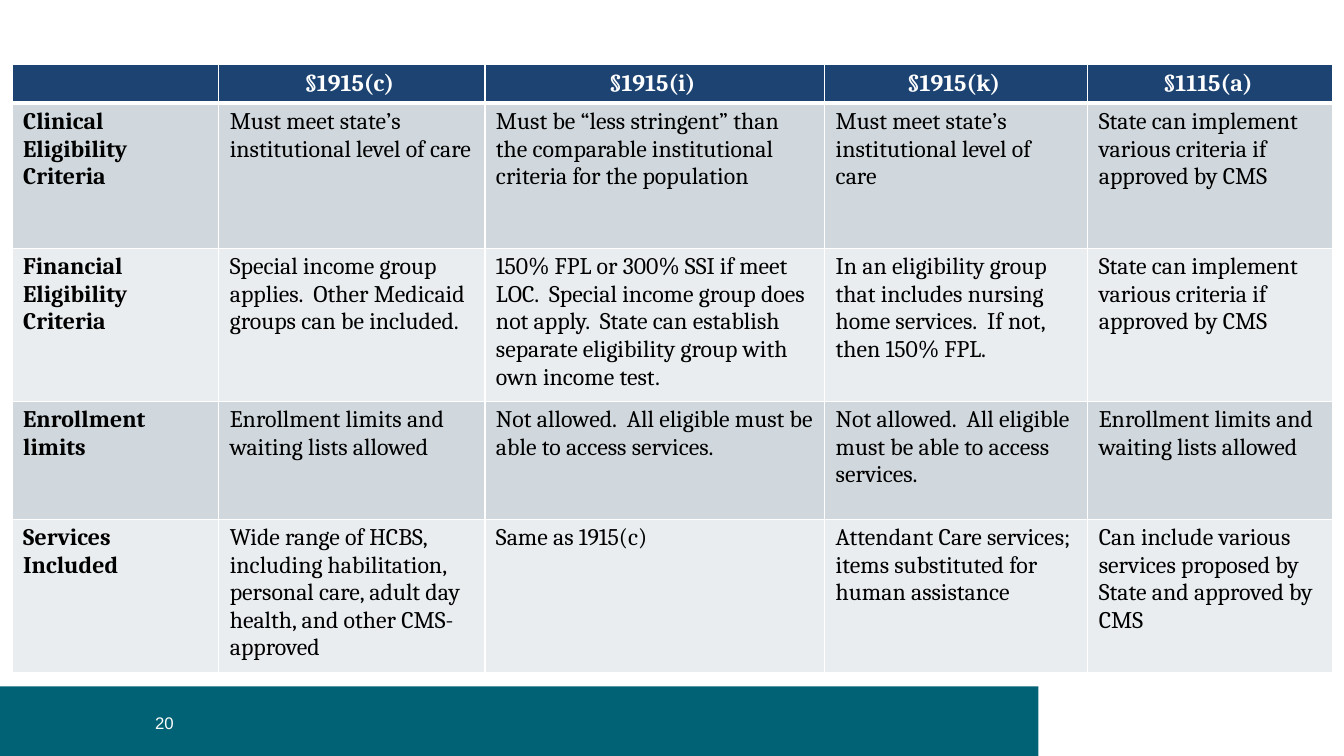
from dataclasses import dataclass

from lxml import etree
from pptx import Presentation
from pptx.dml.color import RGBColor
from pptx.enum import shapes, text
from pptx.oxml import ns
from pptx.util import Inches, Pt

WHITE, BLACK = "FFFFFF", "000000"
NAVY, TEAL = "1C4372", "006274"
BANDS = ("D0D8DD", "E9EDEF")
COLUMN_WIDTHS = (2.05, 2.64, 3.37, 2.61, 2.43)


@dataclass
class Row:
    height: float
    cells: tuple[str, ...]


ROWS = (
    Row(0.38, ("", "§1915(c) ", "§1915(i) ", "§1915(k) ", "§1115(a) ")),
    Row(1.44, (
        "Clinical\nEligibility Criteria",
        "Must meet state’s institutional level of care",
        "Must be “less stringent” than the comparable institutional criteria for the population",
        "Must meet state’s institutional level of care",
        "State can implement various criteria if approved by CMS",
    )),
    Row(0.9, (
        "Financial Eligibility Criteria",
        "Special income group applies.  Other Medicaid groups can be included.",
        "150% FPL or 300% SSI if meet LOC.  Special income group does not apply.  "
        "State can establish separate eligibility group with own income test.",
        "In an eligibility group that includes nursing home services.  If not, then 150% FPL.",
        "State can implement various criteria if approved by CMS",
    )),
    Row(1.17, (
        "Enrollment limits",
        "Enrollment limits and waiting lists allowed",
        "Not allowed.  All eligible must be able to access services.",
        "Not allowed.  All eligible must be able to access services.",
        "Enrollment limits and waiting lists allowed",
    )),
    Row(1.17, (
        "Services Included",
        "Wide range of HCBS, including habilitation, personal care, adult day health, "
        "and other CMS-approved",
        "Same as 1915(c)",
        "Attendant Care services; items substituted for human assistance",
        "Can include various services proposed by State and approved by CMS",
    )),
)


def set_color(target, color: str) -> None:
    """Colour a fill or a font."""
    if hasattr(target, "solid"):
        target.solid()
        target = target.fore_color
    else:
        target = target.color
    target.rgb = RGBColor.from_string(color)


def set_font(p, name: str, size: float, color: str, bold: bool = False) -> None:
    p.font.name, p.font.size, p.font.bold = name, Pt(size), bold
    set_color(p.font, color)


def add_borders(cell, bottom: float) -> None:
    """White cell edges, with the bottom one of the given width in points."""
    tc_pr = cell._tc.get_or_add_tcPr()
    widths = {"lnL": 1, "lnR": 1, "lnT": 1, "lnB": bottom}
    for i, (edge, width) in enumerate(widths.items()):
        line = etree.Element(ns.qn(f"a:{edge}"), w=str(Pt(width)))
        fill = etree.SubElement(line, ns.qn("a:solidFill"))
        etree.SubElement(fill, ns.qn("a:srgbClr"), val=WHITE)
        tc_pr.insert(i, line)


def format_cell(cell, content: str, row: int, column: int) -> None:
    header = row == 0
    cell.text = content
    cell.margin_left = cell.margin_right = Inches(0.11)
    cell.margin_top = cell.margin_bottom = Inches(0.05)
    set_color(cell.fill, NAVY if header else BANDS[(row - 1) % 2])
    add_borders(cell, 3 if header else 1)
    for p in cell.text_frame.paragraphs:
        if header:
            p.alignment = text.PP_ALIGN.CENTER
        set_font(p, "Cambria", 17, WHITE if header else BLACK, header or column == 0)


def add_comparison_table(s) -> None:
    table = s.shapes.add_table(
        len(ROWS), len(COLUMN_WIDTHS), Inches(0.12), Inches(0.64),
        Inches(sum(COLUMN_WIDTHS)), Inches(sum(row.height for row in ROWS)),
    ).table
    for column, width in zip(table.columns, COLUMN_WIDTHS):
        column.width = Inches(width)
    for i, row in enumerate(ROWS):
        table.rows[i].height = Inches(row.height)
        for j, content in enumerate(row.cells):
            format_cell(table.cell(i, j), content, i, j)


def add_footer(s) -> None:
    band = s.shapes.add_shape(
        shapes.MSO_SHAPE.RECTANGLE, 0, Inches(6.81), Inches(10.3), Inches(0.69))
    band.shadow.inherit = False
    set_color(band.fill, TEAL)
    band.line.fill.background()

    number = s.shapes.add_textbox(Inches(1.44), Inches(6.97), Inches(3.11), Inches(0.4))
    tf = number.text_frame
    tf.word_wrap = True
    tf.vertical_anchor = text.MSO_ANCHOR.MIDDLE
    tf.text = "20"
    set_font(tf.paragraphs[0], "Arial", 12, WHITE)


def main() -> None:
    prs = Presentation()
    prs.slide_width, prs.slide_height = Inches(13.33), Inches(7.5)
    s = prs.slides.add_slide(prs.slide_layouts[6])
    add_footer(s)
    add_comparison_table(s)
    prs.save("out.pptx")


if __name__ == "__main__":
    main()
